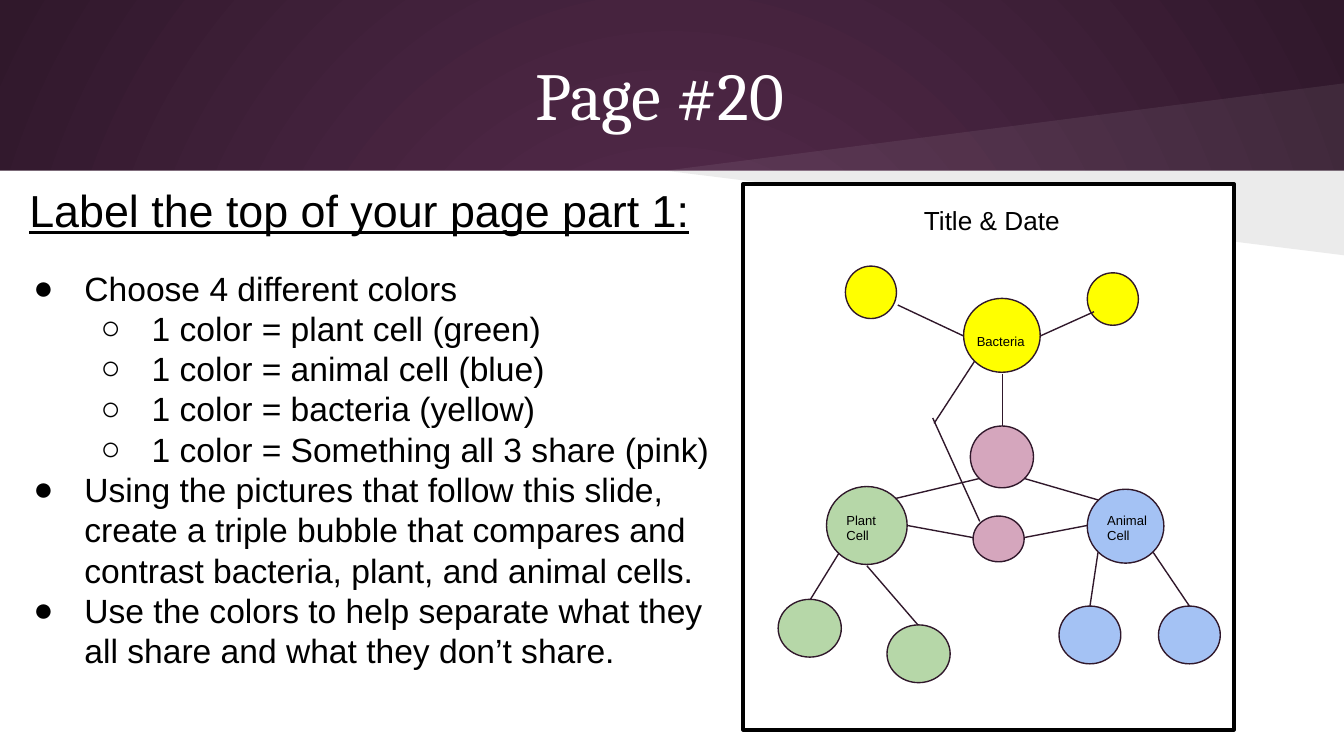
import pptx
import pptx.dml.color
import pptx.enum.shapes
import pptx.enum.text
import pptx.oxml
import pptx.oxml.ns
import pptx.util
from dataclasses import dataclass
from lxml import etree

Inches = pptx.util.Inches
Pt = pptx.util.Pt
Shape = pptx.enum.shapes.MSO_SHAPE
Align = pptx.enum.text.PP_ALIGN
Anchor = pptx.enum.text.MSO_ANCHOR
qn = pptx.oxml.ns.qn


@dataclass(frozen=True)
class Theme:
    glow: str = "592D50"
    dark: str = "30182B"
    white: str = "FFFFFF"
    black: str = "000000"
    yellow: str = "FFFF00"
    green: str = "B6D7A8"
    blue: str = "A4C2F4"
    pink: str = "D5A6BD"
    serif: str = "Cambria"
    sans: str = "Arial"
    title: float = 36
    head: float = 24
    body: float = 18
    sheet: float = 14
    label: float = 7
    thin: float = 0.75
    thick: float = 2.25


T = Theme()
WIDE = 10
HIGH = WIDE * 9 / 16

# x, y, width, height, colour, from the corner of the sheet
BUBBLES = [
    (1.64, 0.85, 0.57, 0.55, T.yellow),
    (0.62, 2.25, 0.60, 0.58, T.green),
    (2.56, 2.27, 0.57, 0.55, T.blue),
    (1.69, 1.80, 0.47, 0.46, T.pink),
    (0.26, 3.09, 0.47, 0.43, T.green),
    (1.07, 3.28, 0.47, 0.43, T.green),
    (2.35, 3.14, 0.46, 0.43, T.blue),
    (3.09, 3.14, 0.46, 0.43, T.blue),
    (0.76, 0.61, 0.38, 0.39, T.yellow),
    (2.56, 0.66, 0.38, 0.39, T.yellow),
    (1.71, 2.47, 0.38, 0.34, T.pink),
]
LINKS = [
    (1.93, 1.41, 1.93, 1.80), (1.76, 2.19, 1.13, 2.34),
    (2.09, 2.19, 2.64, 2.35), (1.64, 1.13, 1.15, 0.90),
    (2.21, 1.13, 2.61, 0.95), (0.71, 2.75, 0.50, 3.09),
    (0.92, 2.84, 1.30, 3.28), (2.64, 2.74, 2.58, 3.14),
    (3.05, 2.74, 3.32, 3.14), (2.09, 2.63, 2.56, 2.54),
    (1.71, 2.63, 1.22, 2.54), (1.76, 2.51, 1.41, 1.74),
    (1.42, 1.78, 1.72, 1.32),
]
LABELS = [
    (1.64, 1.05, ["Bacteria"]),
    (0.67, 2.34, ["Plant Cell"]),
    (2.61, 2.34, ["Animal", "Cell"]),
]
STEPS = [
    (0, "Choose 4 different colors"),
    (1, "1 color = plant cell (green)"),
    (1, "1 color = animal cell (blue)"),
    (1, "1 color = bacteria (yellow)"),
    (1, "1 color = Something all 3 share (pink)"),
    (0, "Using the pictures that follow this slide, create a triple bubble "
        "that compares and contrast bacteria, plant, and animal cells."),
    (0, "Use the colors to help separate what they all share and what they "
        "don’t share."),
]


def rgb(code):
    return pptx.dml.color.RGBColor.from_string(code)


def paint(shape, fill, line=None, width=T.thin):
    shape.shadow.inherit = False
    shape.fill.solid()
    shape.fill.fore_color.rgb = rgb(fill)
    if line:
        shape.line.color.rgb = rgb(line)
        shape.line.width = Pt(width)
    else:
        shape.line.fill.background()


def block(slide, kind, box, *style):
    shape = slide.shapes.add_shape(kind, *map(Inches, box))
    paint(shape, *style)
    return shape


def write(shape, lines, size, font=T.sans, color=T.black,
          align=Align.LEFT, anchor=Anchor.TOP):
    frame = shape.text_frame
    frame.word_wrap = True
    frame.vertical_anchor = anchor
    frame.margin_left = frame.margin_right = Inches(0.1)
    frame.margin_top = frame.margin_bottom = Inches(0.1)
    frame.text = "\n".join(lines)
    for para in frame.paragraphs:
        para.alignment = align
        para.font.size = Pt(size)
        para.font.name = font
        para.font.color.rgb = rgb(color)
    return frame.paragraphs


def note(slide, box, lines, size):
    return write(slide.shapes.add_textbox(*map(Inches, box)), lines, size)


def veil(slide, box, rise, color, alpha):
    """Draw a see-through wedge from the left of the box, up or down."""
    x, y, w, _ = box
    build = slide.shapes.build_freeform(Inches(x + w), Inches(y), 1)
    build.add_line_segments([(Inches(x), Inches(y)),
                             (Inches(x + w), Inches(y + rise))], close=True)
    shape = build.convert_to_shape()
    paint(shape, color)
    tint = shape.fill._xPr.find(".//" + qn("a:srgbClr"))
    etree.SubElement(tint, qn("a:alpha"), val=str(alpha * 1000))


def backdrop(slide, box):
    fill = slide.background.fill
    fill.gradient()
    for stop, color in zip(fill.gradient_stops, (T.glow, T.dark)):
        stop.color.rgb = rgb(color)
    grad = slide.background._cSld.find(".//" + qn("a:gradFill"))
    grad.remove(grad.find(qn("a:lin")))
    glow = etree.Element(qn("a:path"), path="circle")
    etree.SubElement(glow, qn("a:fillToRect"),
                     l="50000", t="50000", r="50000", b="50000")
    grad.find(qn("a:gsLst")).addnext(glow)

    x, y, w, h = box
    band = 1.27
    block(slide, Shape.RECTANGLE, (x, y + band, w, h - band), T.white)
    wedge = (x + 4.95, y + band, w - 4.95, 0.65)
    veil(slide, wedge, 0.63, T.black, 8)
    veil(slide, wedge, -0.65, T.white, 7)


def heading(slide, box):
    title = slide.shapes.title
    title.left, title.top, title.width, title.height = map(Inches, box)
    write(title, ["Page #20 "], T.title, T.serif, T.white,
          Align.CENTER, Anchor.MIDDLE)


def steps(slide, box):
    x, y, w, h = box
    paras = note(slide, (x, y + 0.63, w, h - 0.63),
                 [text for _, text in STEPS], T.body)
    for para, (level, _) in zip(paras, STEPS):
        para.level = level
        props = para._p.get_or_add_pPr()
        props.set("marL", str(Inches(0.5 * (level + 1))))
        props.set("indent", str(Inches(-0.38)))
        last = props.find(qn("a:defRPr"))
        for tag, value in (("a:buSzPts", {"val": str(int(T.body * 100))}),
                           ("a:buFont", {"typeface": T.sans}),
                           ("a:buChar", {"char": "●○"[level]})):
            last.addprevious(etree.Element(qn(tag), value))
    head = note(slide, (x + 0.09, y, 5.32, 0.46),
                ["Label the top of your page part 1:"], T.head)
    head[0].font.underline = True


def link(slide, ends):
    line = slide.shapes.add_connector(
        pptx.enum.shapes.MSO_CONNECTOR.STRAIGHT, *map(Inches, ends))
    line.line.color.rgb = rgb(T.dark)
    line.line.width = Pt(T.thin)
    etree.SubElement(line._element.spPr, qn("a:effectLst"))


def sheet(slide, box):
    """Draw the sample page with its triple bubble map."""
    x, y, w, _ = box
    block(slide, Shape.RECTANGLE, box, T.white, T.black, T.thick)
    top = block(slide, Shape.RECTANGLE,
                (x + 0.11, y + 0.05, w - 0.17, 0.3), T.white)
    write(top, ["Title & Date"], T.sheet, align=Align.CENTER)
    for dx, dy, wide, high, color in BUBBLES:
        block(slide, Shape.OVAL, (x + dx, y + dy, wide, high), color, T.dark)
    for ax, ay, bx, by in LINKS:
        link(slide, (x + ax, y + ay, x + bx, y + by))
    for dx, dy, lines in LABELS:
        note(slide, (x + dx, y + dy, 0.57, 0.23), lines, T.label)


def main():
    deck = pptx.Presentation()
    deck.slide_width, deck.slide_height = Inches(WIDE), Inches(HIGH)
    slide = deck.slides.add_slide(deck.slide_layouts[5])
    backdrop(slide, (0, 0, WIDE, HIGH))
    heading(slide, (0, 0.23, 9.93, 0.94))
    sheet(slide, (5.53, 1.37, 3.65, 4.06))
    steps(slide, (0.03, 1.26, 5.38, 4.6))
    deck.save("out.pptx")


if __name__ == "__main__":
    main()
